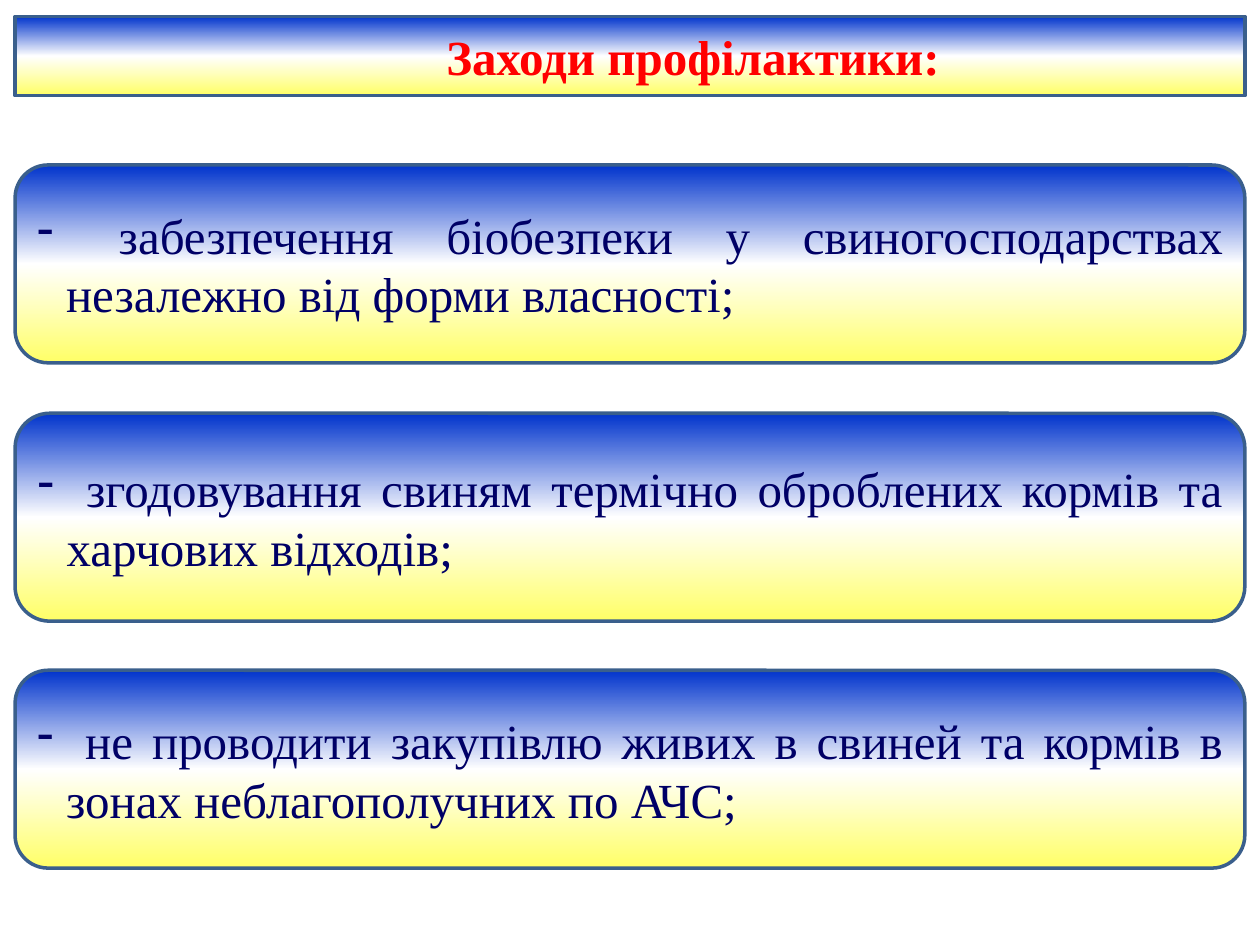
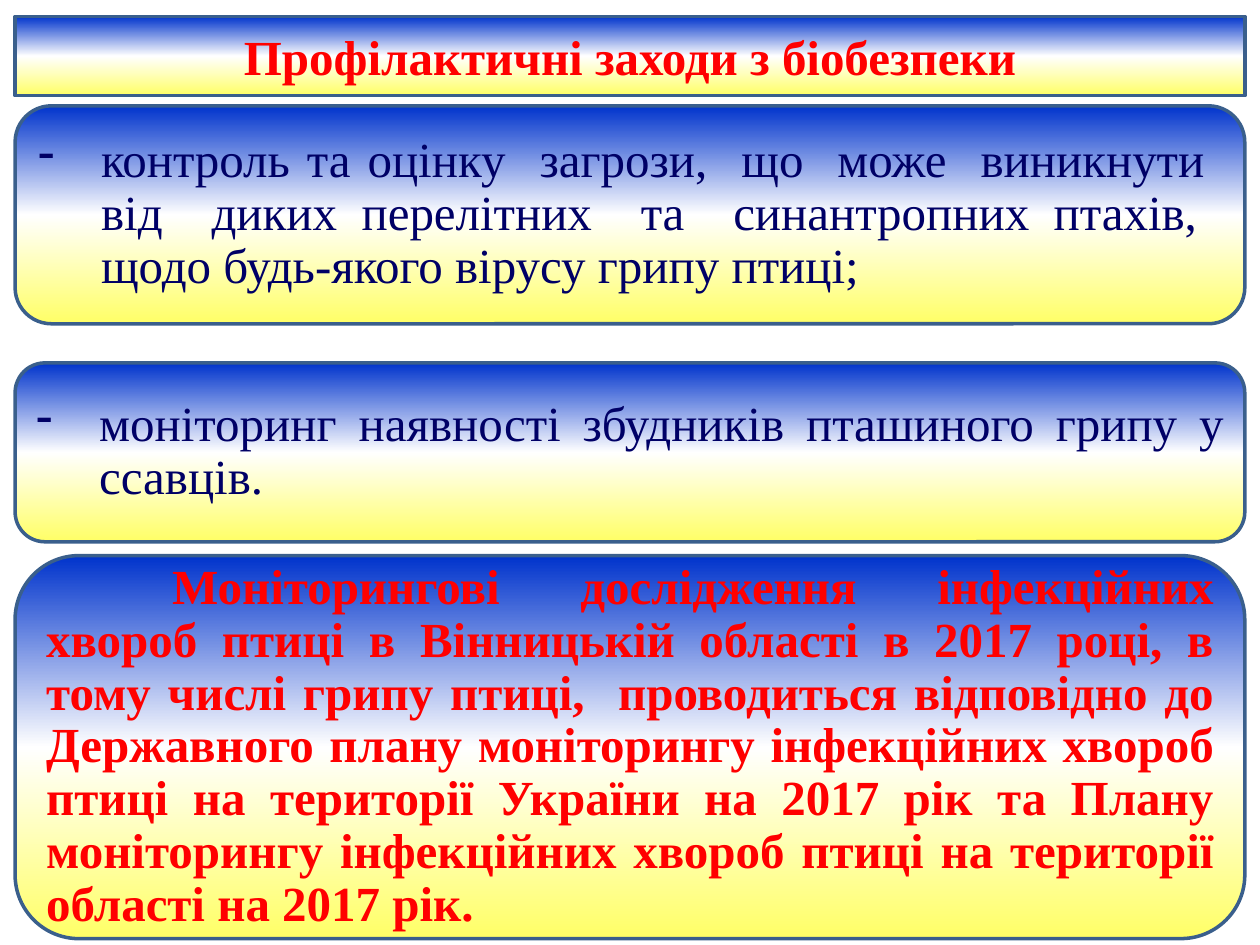
"""Builds two slides of rounded gradient panels on disease prevention."""
from lxml.etree import SubElement
from pptx import Presentation
from pptx.dml.color import RGBColor
from pptx.enum.shapes import MSO_SHAPE
from pptx.enum.text import MSO_ANCHOR, PP_ALIGN
from pptx.oxml.ns import qn
from pptx.util import Inches, Pt

RED, NAVY, EDGE = "FF0000", "000066", "3A5F8C"
FADE = [(0, "0033CC"), (50, "FFFFFF"), (100, "FFFF66")]
deck = Presentation()
deck.slide_width, deck.slide_height = Inches(10), Inches(7.5)
unit = deck.slide_width / 100
left, wide = int(1.2 * unit), int(97.6 * unit)


def paint(shape):
    """Give a shape the shared gradient, outline and no shadow."""
    shape.shadow.inherit = False
    shape.fill.gradient()
    shape.fill.gradient_angle = 270
    stops = shape.element.spPr.find(".//" + qn("a:gsLst"))
    stops.clear()
    for share, tint in FADE:
        stop = SubElement(stops, qn("a:gs"), pos=str(share * 1000))
        SubElement(stop, qn("a:srgbClr"), val=tint)
    shape.line.color.rgb = RGBColor.from_string(EDGE)
    shape.line.width = Pt(2)


def write(shape, text, color=NAVY, bold=False, align=PP_ALIGN.JUSTIFY,
          space=1.0, inset=1, hang=0, first=0):
    """Set the text of a shape; inset, hang and first are in grid units."""
    frame = shape.text_frame
    frame.word_wrap = True
    frame.vertical_anchor = MSO_ANCHOR.MIDDLE
    frame.margin_left = int(inset * unit)
    para = frame.paragraphs[0]
    para.alignment = align
    para.line_spacing = space
    props = para._p.get_or_add_pPr()
    props.set("marL", str(int(hang * unit)))
    props.set("indent", str(int((first - hang) * unit)))
    if hang:
        SubElement(props, qn("a:buChar"), char="-")
    run = para.add_run()
    run.text = text
    font = run.font
    font.name, font.size, font.bold = "Times New Roman", Pt(28), bold
    font.color.rgb = RGBColor.from_string(color)


item = dict(hang=2.3)
wider = dict(hang=5, space=0.9)
note = dict(color=RED, bold=True, space=0.9, first=10)
pages = [
    ("Заходи профілактики:", 11, [
        (13.1, 15.7, " забезпечення біобезпеки у свиногосподарствах незалежно від форми власності;", item),
        (32.8, 16.5, " згодовування свиням термічно оброблених кормів та харчових відходів;", item),
        (53.2, 15.7, " не проводити закупівлю живих в свиней та кормів в зонах неблагополучних по АЧС;", item),
    ]),
    ("Профілактичні заходи з біобезпеки", 1, [
        (8.4, 17.3, "контроль та оцінку  загрози,  що  може  виникнути  від  диких перелітних  та  "
                    "синантропних птахів,  щодо будь-якого вірусу грипу птиці;", wider),
        (28.8, 14.2, "моніторинг наявності збудників пташиного грипу у ссавців.", wider),
        (44.1, 30.4, "Моніторингові дослідження інфекційних хвороб птиці в Вінницькій області в 2017 році, "
                     "в тому числі грипу птиці,  проводиться відповідно до Державного плану моніторингу "
                     "інфекційних хвороб птиці на території України на 2017 рік та Плану моніторингу "
                     "інфекційних хвороб птиці на території області на 2017 рік.", note),
    ]),
]

for head, inset, cards in pages:
    slide = deck.slides.add_slide(deck.slide_layouts[5])
    title = slide.shapes.title
    title.left, title.top = left, int(1.3 * unit)
    title.width, title.height = wide, int(6.3 * unit)
    shape = SubElement(title.element.spPr, qn("a:prstGeom"), prst="roundRect")
    SubElement(shape, qn("a:avLst"))
    paint(title)
    write(title, head, color=RED, bold=True, align=PP_ALIGN.CENTER, inset=inset)
    for top, tall, text, style in cards:
        card = slide.shapes.add_shape(MSO_SHAPE.ROUNDED_RECTANGLE, left,
                                      int(top * unit), wide, int(tall * unit))
        paint(card)
        write(card, text, **style)

deck.save("out.pptx")
